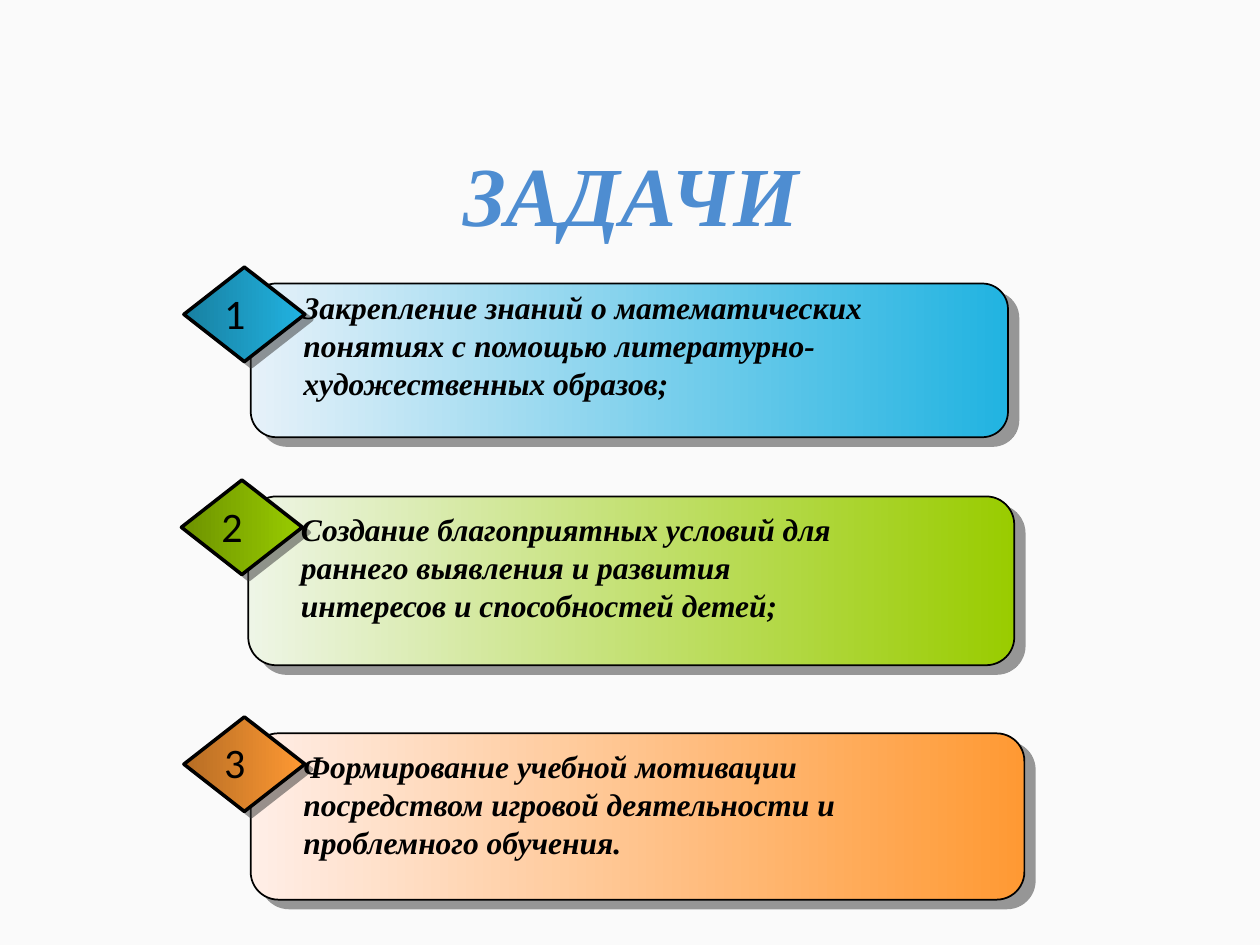
from dataclasses import dataclass

from lxml.etree import SubElement
from pptx import Presentation
from pptx.dml.color import RGBColor as Rgb
from pptx.enum.shapes import MSO_SHAPE as Kind
from pptx.enum.text import MSO_ANCHOR as Anchor
from pptx.enum.text import MSO_AUTO_SIZE as Fit
from pptx.enum.text import PP_ALIGN as Align
from pptx.oxml.ns import qn
from pptx.util import Inches, Pt

WIDE, HIGH = Inches(10), Inches(7.5)
CELL = WIDE // 100  # the slide is a grid of 100 columns and 75 rows
SERIF, SANS = "Times New Roman", "Calibri"

HEX = {
    "page": "FAFAFA", "ink": "000000", "shade": "333333",
    "blue": "21B3E1", "blue pale": "E6F1F9", "blue deep": "1880A1",
    "green": "99CC00", "green pale": "EEF5E6", "green deep": "6D9200",
    "orange": "FF9933", "orange pale": "FFEEE7", "orange deep": "B66D24",
}
TITLE_STOPS = {0: "74A3DB", 49: "4E8DD1", 50: "3C81C0", 92: "3A73A7", 100: "3971A4"}


@dataclass
class Area:
    """A place on the grid, in columns and rows."""
    left: float
    top: float
    wide: float
    high: float

    def emu(self) -> list[int]:
        return [round(n * CELL) for n in (self.left, self.top, self.wide, self.high)]


@dataclass
class Task:
    hue: str
    box: Area
    text: str
    note: Area


TASKS = [
    Task("blue", Area(19.9, 22.5, 60.1, 12.2),
         "Закрепление знаний о математических понятиях с помощью "
         "литературно-художественных образов;", Area(23.1, 22.4, 55.9, 16.2)),
    Task("green", Area(19.7, 39.4, 60.8, 13.4),
         "Создание благоприятных условий для раннего выявления и развития "
         "интересов и способностей детей;", Area(22.9, 40, 48, 13.1)),
    Task("orange", Area(19.9, 58.2, 61.4, 13.2),
         "Формирование учебной мотивации посредством игровой деятельности "
         "и проблемного обучения.", Area(23.1, 58.8, 48.5, 16.2)),
]


def color(name: str) -> Rgb:
    return Rgb.from_string(HEX[name])


def write(frame, text: str, *, size: float, font: str, ink: str | None = "ink",
          bold: bool | None = None, slant: bool | None = None,
          align: Align | None = None, wrap: bool = True, fit: Fit = Fit.SHAPE_TO_FIT_TEXT):
    frame.word_wrap, frame.auto_size = wrap, fit
    para = frame.paragraphs[0]
    para.alignment = align
    run = para.add_run()
    run.text = text
    face = run.font
    face.size, face.name, face.bold, face.italic = Pt(size), font, bold, slant
    if ink:
        face.fill.solid()
        face.fill.fore_color.rgb = color(ink)
    return run


def blend(run, stops: dict[int, str]) -> None:
    """Fill the letters with a gradient from top to bottom."""
    props = run._r.get_or_add_rPr()
    grad = SubElement(props, qn("a:gradFill"))
    props.insert(0, grad)
    items = SubElement(grad, qn("a:gsLst"))
    for place, tint in stops.items():
        stop = SubElement(items, qn("a:gs"), pos=str(place * 1000))
        SubElement(stop, qn("a:srgbClr"), val=tint)
    SubElement(grad, qn("a:lin"), ang=str(90 * 60000), scaled="0")


def cast(shape, dist: float, angle: int) -> None:
    """Give the shape a hard, half-clear shadow."""
    shape.shadow.inherit = False
    effects = shape._element.spPr.find(qn("a:effectLst"))
    shadow = SubElement(effects, qn("a:outerShdw"), blurRad="0", dist=str(int(Pt(dist))),
                        dir=str(angle * 60000), algn="ctr", rotWithShape="0")
    tint = SubElement(shadow, qn("a:srgbClr"), val=HEX["shade"])
    SubElement(tint, qn("a:alpha"), val="50000")


def draw(group, kind: Kind, area: Area, start: str, end: str, line: float,
         dist: float, angle: int) -> None:
    shape = group.shapes.add_shape(kind, *area.emu())
    shape.fill.gradient()
    shape.fill.gradient_angle = 0
    for stop, name in zip(shape.fill.gradient_stops, (start, end)):
        stop.color.rgb = color(name)
    for stop, place in zip(shape.fill.gradient_stops, (0, 1)):
        stop.position = place
    shape.line.color.rgb = color("ink")
    shape.line.width = Pt(line)
    cast(shape, dist, angle)


def add_task(slide, number: int, task: Task) -> None:
    group = slide.shapes.add_group_shape()
    box, hue = task.box, task.hue
    gem = Area(box.left - 5.3, box.top - 1.3, 9.6, 7.5)
    mark = Area(box.left - 3.1, box.top - 0.2, 5, 5)
    draw(group, Kind.ROUNDED_RECTANGLE, box, f"{hue} pale", hue, 1, 7.8, 40)
    draw(group, Kind.DIAMOND, gem, f"{hue} deep", hue, 2, 5, 37)
    note = group.shapes.add_textbox(*task.note.emu())
    write(note.text_frame, task.text, size=18, font=SERIF, bold=True, slant=True)
    label = group.shapes.add_textbox(*mark.emu())
    write(label.text_frame, str(number), size=24, font=SANS, wrap=False)


def add_title(slide, text: str) -> None:
    title = slide.shapes.title
    title.left, title.top, title.width, title.height = Area(2.8, 9.7, 94.6, 12.3).emu()
    frame = title.text_frame
    frame.vertical_anchor = Anchor.MIDDLE
    run = write(frame, text, size=48, font=SERIF, ink=None, bold=True, slant=True,
                align=Align.CENTER, fit=Fit.NONE)
    frame.paragraphs[0].line_spacing = 0.9
    blend(run, TITLE_STOPS)


def main() -> None:
    deck = Presentation()
    deck.slide_width, deck.slide_height = WIDE, HIGH
    slide = deck.slides.add_slide(deck.slide_layouts.get_by_name("Title Only"))
    slide.background.fill.solid()
    slide.background.fill.fore_color.rgb = color("page")
    add_title(slide, "ЗАДАЧИ")
    for number, task in enumerate(TASKS, 1):
        add_task(slide, number, task)
    deck.save("out.pptx")


if __name__ == "__main__":
    main()
